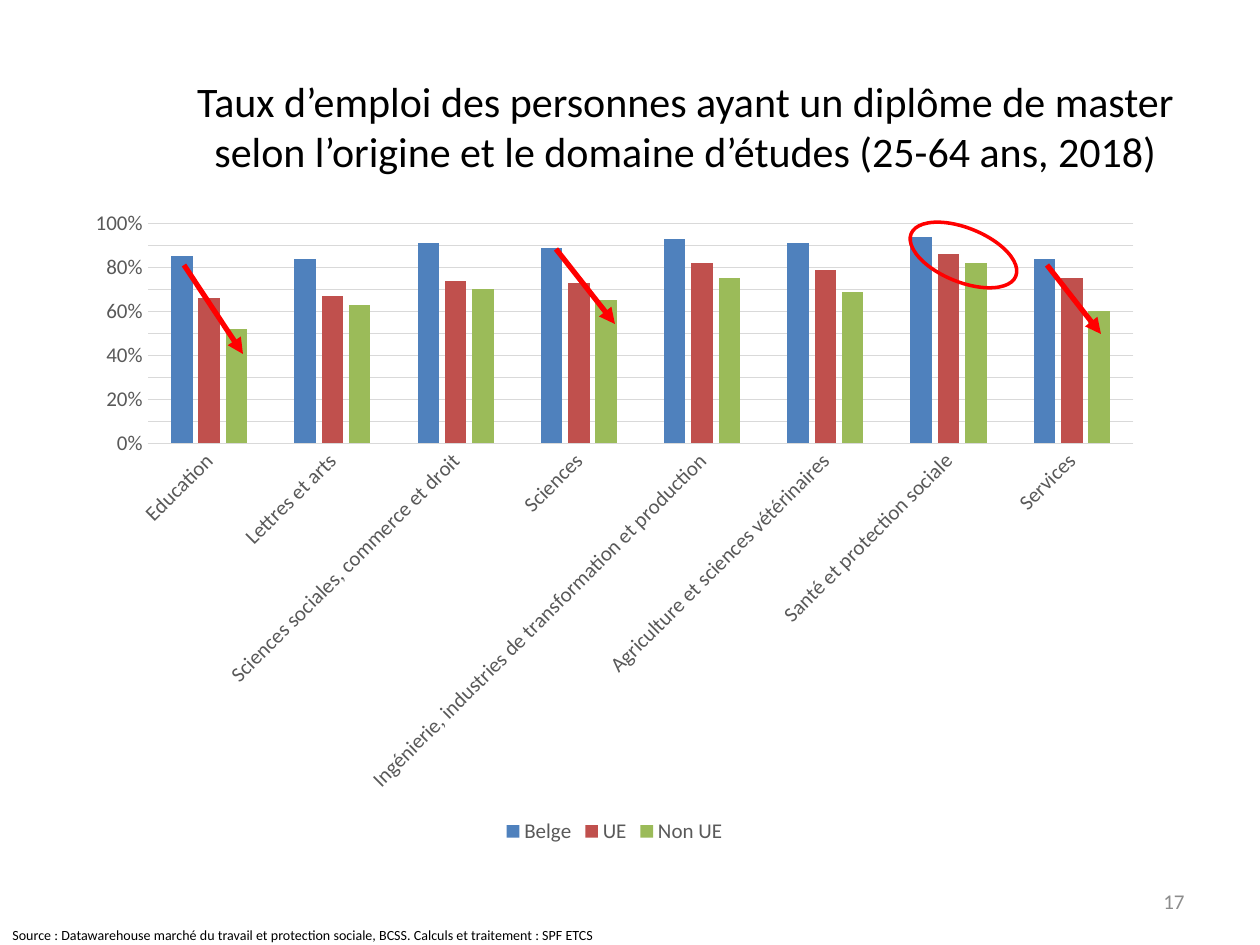
"""Build a slide charting employment rates by origin and field of study."""
from lxml import etree
from pptx import Presentation
from pptx.chart.data import CategoryChartData
from pptx.dml.color import RGBColor
from pptx.enum.chart import XL_CHART_TYPE, XL_LEGEND_POSITION, XL_TICK_MARK
from pptx.enum.shapes import MSO_CONNECTOR, MSO_SHAPE
from pptx.enum.text import MSO_ANCHOR, MSO_AUTO_SIZE, PP_ALIGN
from pptx.oxml.ns import qn
from pptx.util import Pt

COLUMNS = XL_CHART_TYPE.COLUMN_CLUSTERED
BOTTOM = XL_LEGEND_POSITION.BOTTOM
NO_TICK = XL_TICK_MARK.NONE
STRAIGHT = MSO_CONNECTOR.STRAIGHT
OVAL = MSO_SHAPE.OVAL
LEFT, CENTER, RIGHT = PP_ALIGN.LEFT, PP_ALIGN.CENTER, PP_ALIGN.RIGHT
TOP, MIDDLE = MSO_ANCHOR.TOP, MSO_ANCHOR.MIDDLE
GROW = MSO_AUTO_SIZE.SHAPE_TO_FIT_TEXT

SCALE = 914400 / 126
FONT = "Calibri"
BLACK, GREY, PALE, RED = "000000", "595959", "D9D9D9", "FF0000"

FIELDS = [
    "Education",
    "Lettres et arts",
    "Sciences sociales, commerce et droit",
    "Sciences",
    "Ingénierie, industries de transformation et production",
    "Agriculture et sciences vétérinaires",
    "Santé et protection sociale",
    "Services",
]
RATES = [
    ("Belge", "4F81BD", [0.85, 0.84, 0.91, 0.89, 0.93, 0.91, 0.94, 0.84]),
    ("UE", "C0504D", [0.66, 0.67, 0.74, 0.73, 0.82, 0.79, 0.86, 0.75]),
    ("Non UE", "9BBB59", [0.52, 0.63, 0.7, 0.65, 0.75, 0.69, 0.82, 0.6]),
]
ARROWS = [(184, 265, 243, 354), (1047, 265, 1101, 334), (556, 249, 615, 324)]


def px(*lengths):
    return [round(n * SCALE) for n in lengths]


def rgb(color):
    return RGBColor.from_string(color)


class SlideBuilder:
    def __init__(self, slide):
        self.s = slide

    def style_font(self, font, size, color):
        font.name, font.size = FONT, Pt(size)
        font.color.rgb = rgb(color)

    def style_line(self, line, color, width):
        line.color.rgb = rgb(color)
        line.width = Pt(width)

    def text(self, box, text, size, color=BLACK, align=LEFT, anchor=TOP):
        tf = self.s.shapes.add_textbox(*px(*box)).text_frame
        tf.word_wrap = True
        tf.auto_size = GROW if anchor == TOP else MSO_AUTO_SIZE.NONE
        tf.vertical_anchor = anchor
        p = tf.paragraphs[0]
        p.text, p.alignment = text, align
        self.style_font(p.font, size, color)

    def chart(self, box, categories, series):
        data = CategoryChartData(number_format="0%")
        data.categories = categories
        for name, _, values in series:
            data.add_series(name, values)
        chart = self.s.shapes.add_chart(COLUMNS, *px(*box), data).chart
        self.style_font(chart.font, 12, BLACK)
        chart.has_title = False
        chart.has_legend = True
        chart.legend.position = BOTTOM
        chart.legend.include_in_layout = False
        self.style_font(chart.legend.font, 12, GREY)

        plot = chart.plots[0]
        plot.gap_width, plot.overlap = 219, -27
        plot.vary_by_categories = False
        for bars, (_, color, _) in zip(plot.series, series):
            bars.format.fill.solid()
            bars.format.fill.fore_color.rgb = rgb(color)
            bars.invert_if_negative = False

        cat, val = chart.category_axis, chart.value_axis
        for axis in (cat, val):
            axis.major_tick_mark = axis.minor_tick_mark = NO_TICK
            self.style_font(axis.tick_labels.font, 12, GREY)
        self.style_line(cat.format.line, PALE, 0.75)
        cat._element.find(".//" + qn("a:bodyPr")).set("rot", "-2700000")
        val.minimum_scale, val.maximum_scale, val.major_unit = 0, 1, 0.1
        val.tick_labels.number_format = "0%"
        val.tick_labels.number_format_is_linked = False
        val.format.line.fill.background()
        self.style_line(val.major_gridlines.format.line, PALE, 0.75)

    def arrow(self, ends):
        c = self.s.shapes.add_connector(STRAIGHT, *px(*ends))
        self.style_line(c.line, RED, 3)
        etree.SubElement(c.line._get_or_add_ln(), qn("a:tailEnd"), type="triangle")
        etree.SubElement(c._element.spPr, qn("a:effectLst"))

    def ring(self, box, rotation):
        sp = self.s.shapes.add_shape(OVAL, *px(*box))
        sp.rotation = rotation
        sp.shadow.inherit = False
        sp.fill.background()
        self.style_line(sp.line, RED, 2)


def main():
    prs = Presentation()
    prs.slide_width, prs.slide_height = px(1260, 945)
    b = SlideBuilder(prs.slides.add_slide(prs.slide_layouts[6]))
    b.text((903, 876, 294, 50), "17", 12, "8C8C8C", RIGHT, MIDDLE)
    b.text((154, 69, 1063, 115),
           "Taux d’emploi des personnes ayant un diplôme de master "
           "selon l’origine et le domaine d’études (25-64 ans, 2018)",
           24, align=CENTER)
    b.chart((74, 198, 1081, 651), FIELDS, RATES)
    for ends in ARROWS:
        b.arrow(ends)
    b.ring((907, 228, 113, 54), 22.1)
    b.text((0, 920, 639, 30),
           "Source : Datawarehouse marché du travail et protection sociale, BCSS. "
           "Calculs et traitement : SPF ETCS", 8)
    prs.save("out.pptx")


if __name__ == "__main__":
    main()
